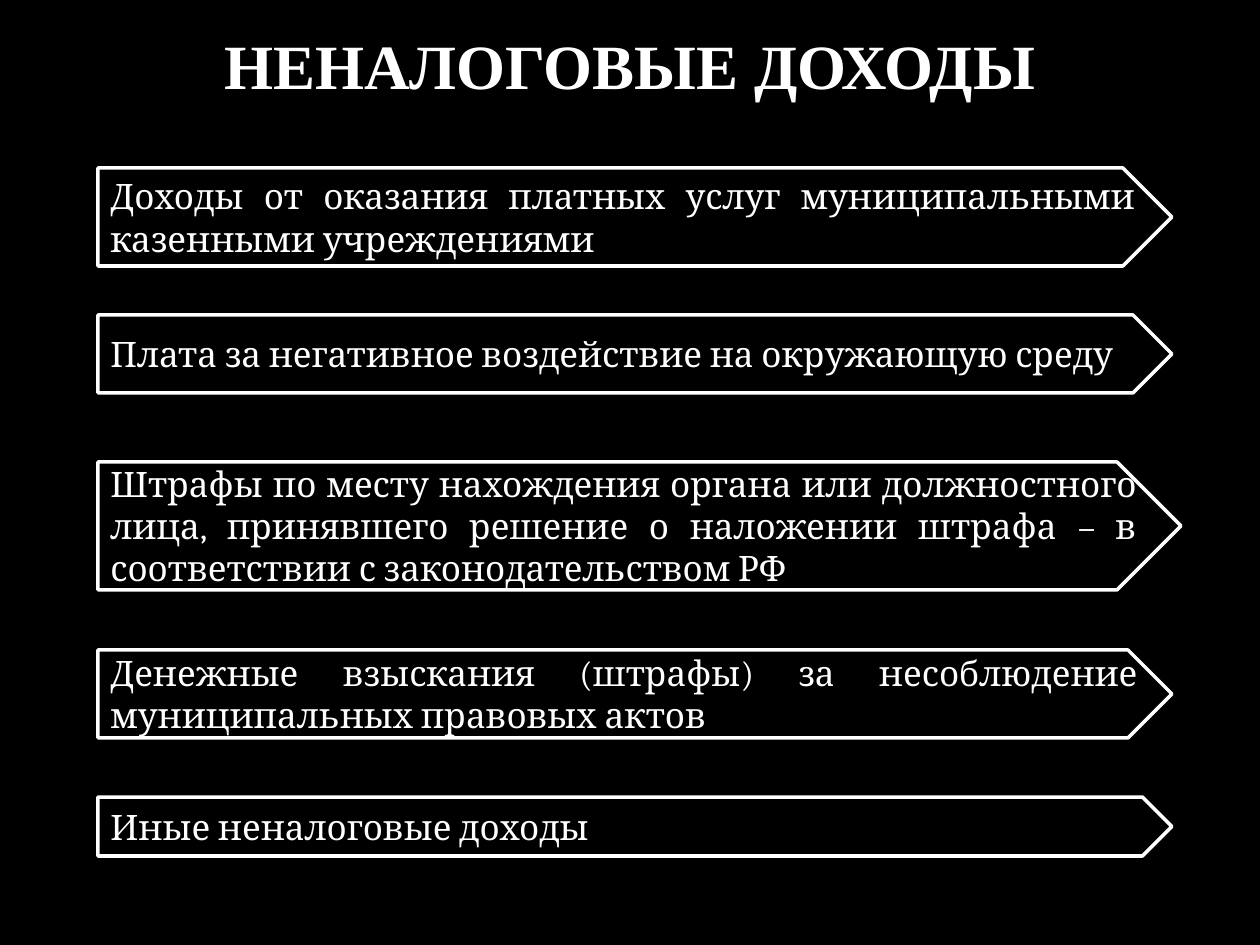
import pptx
import pptx.dml.color
import pptx.enum.shapes
import pptx.enum.text
import pptx.util

PX_PER_INCH = 126
BLACK = "000000"
WHITE = "FFFFFF"
ARROWS = [
    (168, 1074, 98, "Доходы от оказания платных услуг муниципальными казенными учреждениями"),
    (315, 1074, 78, "Плата за негативное воздействие на окружающую среду"),
    (462, 1083, 128, "Штрафы по месту нахождения органа или должностного лица, принявшего "
                     "решение о наложении штрафа – в соответствии с законодательством РФ"),
    (650, 1074, 88, "Денежные взыскания (штрафы) за несоблюдение муниципальных правовых актов"),
    (797, 1074, 59, "Иные неналоговые доходы"),
]


def px(length):
    return pptx.util.Emu(round(length * 914400 / PX_PER_INCH))


def color(value):
    return pptx.dml.color.RGBColor.from_string(value)


def paint(fill, value):
    fill.solid()
    fill.fore_color.rgb = color(value)


def write(shape, text, font_name, size, align, anchor, bold=False):
    frame = shape.text_frame
    frame.word_wrap = True
    frame.auto_size = pptx.enum.text.MSO_AUTO_SIZE.NONE
    frame.vertical_anchor = anchor
    frame.text = text
    para = frame.paragraphs[0]
    para.alignment = align
    para.font.name = font_name
    para.font.size = pptx.util.Pt(size)
    para.font.bold = bold
    para.font.color.rgb = color(WHITE)


def add_title(page, left, top, width, height):
    title = page.shapes.title
    title.left, title.top = px(left), px(top)
    title.width, title.height = px(width), px(height)
    write(title, "НЕНАЛОГОВЫЕ ДОХОДЫ", "Times New Roman", 36,
          pptx.enum.text.PP_ALIGN.CENTER, pptx.enum.text.MSO_ANCHOR.TOP, True)


def add_arrow(page, left, top, width, height, text):
    arrow = page.shapes.add_shape(
        pptx.enum.shapes.MSO_SHAPE.PENTAGON, px(left), px(top), px(width), px(height))
    arrow.shadow.inherit = False
    paint(arrow.fill, BLACK)
    paint(arrow.line.fill, WHITE)
    arrow.line.width = pptx.util.Pt(2)
    write(arrow, text, "Cambria", 20,
          pptx.enum.text.PP_ALIGN.JUSTIFY, pptx.enum.text.MSO_ANCHOR.MIDDLE)


def main():
    deck = pptx.Presentation()
    deck.slide_width, deck.slide_height = px(1260), px(945)
    page = deck.slides.add_slide(deck.slide_layouts.get_by_name("Title Only"))
    paint(page.background.fill, BLACK)
    add_title(page, 0, 20, 1260, 89)
    for top, width, height, text in ARROWS:
        add_arrow(page, 98, top, width, height, text)
    deck.save("out.pptx")


if __name__ == "__main__":
    main()
